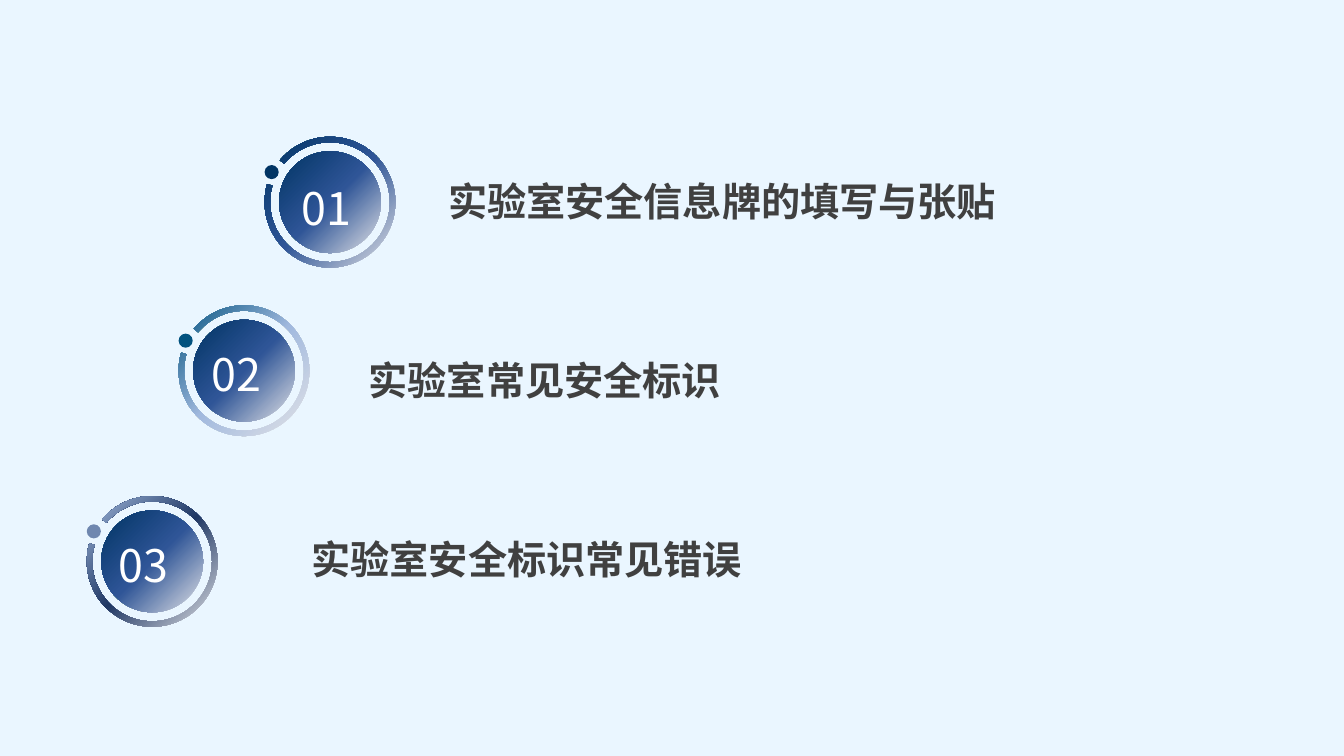
from pptx import Presentation
from pptx.dml.color import RGBColor
from pptx.enum.shapes import MSO_SHAPE
from pptx.enum.text import PP_ALIGN
from pptx.oxml import parse_xml
from pptx.oxml.ns import nsdecls, qn
from pptx.util import Pt
from lxml import etree

FONT = "Noto Sans CJK SC"
RING, DISC, DOT = 93.4, 72.7, 10.1
DISC_STOPS = ("003464", "2F5597", "E2E3E7")


def add_filled(kind, x, y, w, h, colors, alpha=100):
    """Shape without a line; three colours give a gradient from the top left."""
    sp = slide.shapes.add_shape(kind, Pt(x), Pt(y), Pt(w), Pt(h))
    sp.shadow.inherit = False
    sp.line.fill.background()
    if len(colors) == 1:
        sp.fill.solid()
        sp.fill.fore_color.rgb = RGBColor.from_string(colors[0])
        if alpha < 100:
            clr = sp._element.spPr.find(".//" + qn("a:srgbClr"))
            etree.SubElement(clr, qn("a:alpha"), val=str(alpha * 1000))
    else:
        sp.fill.background()
        stops = "".join(f'<a:gs pos="{i * 50000}"><a:srgbClr val="{c}"/></a:gs>'
                        for i, c in enumerate(colors))
        grad = parse_xml(
            f'<a:gradFill {nsdecls("a")} rotWithShape="1"><a:gsLst>{stops}</a:gsLst>'
            '<a:path path="circle"><a:fillToRect r="100000" b="100000"/></a:path>'
            '</a:gradFill>')
        spPr = sp._element.spPr
        spPr.replace(spPr.find(qn("a:noFill")), grad)
    return sp


def add_text(text, x, y, w, h, size=28, color="404040", bold=False,
             align=PP_ALIGN.LEFT):
    tf = slide.shapes.add_textbox(Pt(x), Pt(y), Pt(w), Pt(h)).text_frame
    tf.word_wrap = True
    p = tf.paragraphs[0]
    p.alignment = align
    r = p.add_run()
    r.text = text
    r.font.size = Pt(size)
    r.font.bold = bold
    r.font.color.rgb = RGBColor.from_string(color)
    r.font.name = FONT
    etree.SubElement(r._r.get_or_add_rPr(), qn("a:ea"), typeface=FONT)


prs = Presentation()
prs.slide_width, prs.slide_height = Pt(960), Pt(540)
slide = prs.slides.add_slide(prs.slide_layouts[6])

# Pale blue backdrop
add_filled(MSO_SHAPE.RECTANGLE, 0, 0, 960, 540, ["BAE4FF"], alpha=30)

# Badge centre, ring colours, dot colour, number position, label, label box
items = [
    (235.7, 144.4, DISC_STOPS, "003464", (208.1, 125.3),
     "实验室安全信息牌的填写与张贴", (283.7, 123.1, 434.9)),
    (174.3, 264.8, ("01527F", "A1B9DE", "E2E3E7"), "01527F", (144, 244.1),
     "实验室常见安全标识", (226.8, 251.3, 295.2)),
    (108.7, 401, ("A1B9DE", "203864", "E2E3E7"), "6F87AF", (77.8, 380.2),
     "实验室安全标识常见错误", (108.7, 378.7, 428.4)),
]

for n, (cx, cy, ring_stops, dot_color, num_at, label, label_box) in enumerate(items, 1):
    left, top = cx - RING / 2, cy - RING / 2

    # Open ring: start and end angle in degrees, then relative thickness
    ring = add_filled(MSO_SHAPE.BLOCK_ARC, left, top, RING, RING, ring_stops)
    ring.adjustments[0] = 220 * 0.6
    ring.adjustments[1] = 196 * 0.6
    ring.adjustments[2] = 0.042

    # Disc and the dot in the gap of the ring
    add_filled(MSO_SHAPE.OVAL, cx - DISC / 2, cy - DISC / 2, DISC, DISC, DISC_STOPS)
    add_filled(MSO_SHAPE.OVAL, left, top + 20.2, DOT, DOT, [dot_color])

    # Number and label
    add_text(f"{n:02}", *num_at, 63.4, 46, size=32, color="FFFFFF")
    add_text(label, *label_box, 41, bold=True, align=PP_ALIGN.RIGHT)

prs.save("out.pptx")
